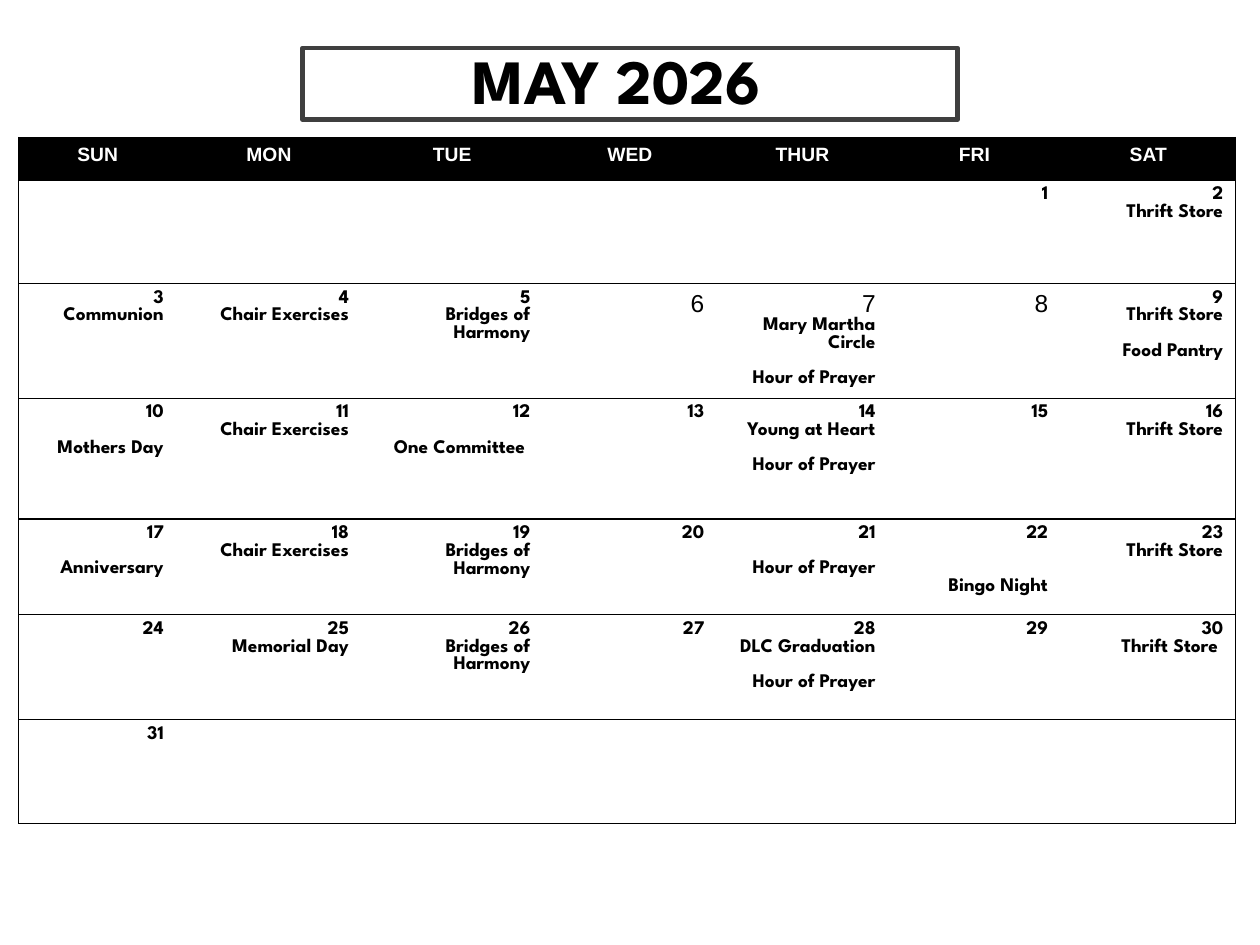
from dataclasses import dataclass

from pptx import Presentation
from pptx.dml.color import RGBColor
from pptx.enum.text import MSO_ANCHOR, MSO_AUTO_SIZE, PP_ALIGN
from pptx.oxml import parse_xml
from pptx.oxml.ns import nsdecls
from pptx.util import Inches, Pt


@dataclass(frozen=True)
class Theme:
    """Colours, fonts and type sizes of the calendar."""

    ink: str = "000000"
    paper: str = "FFFFFF"
    frame: str = "3F3F3F"
    display: str = "League Spartan"
    plain: str = "Arial"
    title_size: int = 36
    text_size: int = 11
    large_size: int = 14
    blank_line: int = 10
    rule: float = 0.75
    title_rule: float = 2.5


THEME = Theme()
PLAIN_TABLE = "{2D5ABB26-0587-4C30-8999-92F81FD0307C}"
WEEKDAYS = ["SUN", "MON", "TUE", "WED", "THUR", "FRI", "SAT"]
COLUMN_WIDTHS = [1.25, 1.47, 1.44, 1.38, 1.36, 1.37, 1.39]
ROW_HEIGHTS = [0.34, 0.82, 0.91, 0.96, 0.76, 0.83, 0.83]
RULED_ROWS = {0, 2, 4, 6}
FIRST_COLUMN = 5
DAYS_IN_MONTH = 31
PLAIN_DAYS = {6, 7, 8}

THRIFT = (0, "Thrift Store")
CHAIR = (0, "Chair Exercises")
BRIDGES = (0, "Bridges of Harmony")
PRAYER = (1, "Hour of Prayer")
EVENTS = {
    2: [THRIFT],
    3: [(0, "Communion")],
    4: [CHAIR],
    5: [BRIDGES],
    7: [(0, "Mary Martha Circle"), PRAYER],
    9: [THRIFT, (1, "Food Pantry")],
    10: [(1, "Mothers Day")],
    11: [CHAIR],
    12: [(1, "One Committee ")],
    14: [(0, "Young at Heart"), PRAYER],
    16: [THRIFT],
    17: [(1, "Anniversary")],
    18: [CHAIR],
    19: [BRIDGES],
    21: [PRAYER],
    22: [(2, "Bingo Night")],
    23: [THRIFT],
    25: [(0, "Memorial Day")],
    26: [BRIDGES],
    28: [(0, "DLC Graduation"), PRAYER],
    30: [(0, "Thrift Store ")],
}


def style_text(paragraph, align, font, size, color, bold=True):
    """Align a paragraph and format its runs."""
    paragraph.alignment = align
    for span in paragraph.runs:
        span.font.name = font
        span.font.size = Pt(size)
        span.font.bold = bold
        span.font.color.rgb = RGBColor.from_string(color)


def add_title(page, text):
    """Place the month in the framed title placeholder."""
    box = page.shapes.title
    box.left, box.top = Inches(2.4), Inches(0.38)
    box.width, box.height = Inches(5.2), Inches(0.57)
    box.fill.solid()
    box.fill.fore_color.rgb = RGBColor.from_string(THEME.paper)
    box.line.color.rgb = RGBColor.from_string(THEME.frame)
    box.line.width = Pt(THEME.title_rule)
    frame = box.text_frame
    frame.text = text
    frame.word_wrap = True
    frame.auto_size = MSO_AUTO_SIZE.NONE
    frame.vertical_anchor = MSO_ANCHOR.MIDDLE
    frame.margin_left = frame.margin_right = Inches(0.2)
    frame.margin_top = frame.margin_bottom = Inches(0.2)
    paragraph = frame.paragraphs[0]
    paragraph.line_spacing = 0.9
    paragraph.space_before = Pt(0)
    style_text(paragraph, PP_ALIGN.CENTER, THEME.display, THEME.title_size, THEME.ink)


def add_borders(cell, sides):
    """Draw the named sides of a cell, given in the order L, R, T, B."""
    properties = cell._tc.get_or_add_tcPr()
    for side in sides:
        properties.append(parse_xml(
            f'<a:ln{side} {nsdecls("a")} w="{Pt(THEME.rule)}"><a:solidFill>'
            f'<a:srgbClr val="{THEME.ink}"/></a:solidFill></a:ln{side}>'
        ))


def add_grid(page):
    """Add the empty calendar table with its outer frame and row rules."""
    rows, columns = len(ROW_HEIGHTS), len(COLUMN_WIDTHS)
    table = page.shapes.add_table(
        rows, columns, Inches(0.15), Inches(1.09),
        Inches(sum(COLUMN_WIDTHS)), Inches(sum(ROW_HEIGHTS)),
    ).table
    table._tbl.tblPr.find("{*}tableStyleId").text = PLAIN_TABLE
    table.horz_banding = False
    for column, width in zip(table.columns, COLUMN_WIDTHS):
        column.width = Inches(width)
    for row, height in zip(table.rows, ROW_HEIGHTS):
        row.height = Inches(height)
    for row in range(rows):
        for column in range(columns):
            cell = table.cell(row, column)
            sides = {
                "L": column == 0,
                "R": column == columns - 1,
                "T": row == 0 or row - 1 in RULED_ROWS,
                "B": row in RULED_ROWS,
            }
            add_borders(cell, [side for side, drawn in sides.items() if drawn])
            cell.fill.background()
    return table


def fill_header(table):
    """Write the weekday names on the dark first row."""
    for column, name in enumerate(WEEKDAYS):
        cell = table.cell(0, column)
        cell.fill.solid()
        cell.fill.fore_color.rgb = RGBColor.from_string(THEME.ink)
        cell.text_frame.text = name
        style_text(cell.text_frame.paragraphs[0], PP_ALIGN.CENTER,
                   THEME.plain, THEME.text_size, THEME.paper)


def fill_day(cell, day):
    """Write a day number and its events, spaced by their gaps."""
    frame = cell.text_frame
    frame.text = str(day)
    number = frame.paragraphs[0]
    if day in PLAIN_DAYS:
        style_text(number, PP_ALIGN.RIGHT, THEME.plain, THEME.large_size, THEME.ink, False)
    else:
        style_text(number, PP_ALIGN.RIGHT, THEME.display, THEME.text_size, THEME.ink)
    for gap, event in EVENTS.get(day, []):
        paragraph = frame.add_paragraph()
        paragraph.text = event
        paragraph.space_before = Pt(gap * THEME.blank_line)
        style_text(paragraph, PP_ALIGN.RIGHT, THEME.display, THEME.text_size, THEME.ink)


def main():
    """Build the calendar slide and save it."""
    deck = Presentation()
    deck.slide_width, deck.slide_height = Inches(10), Inches(7.5)
    page = deck.slides.add_slide(deck.slide_layouts[5])
    add_title(page, "MAY 2026\t")
    table = add_grid(page)
    fill_header(table)
    for day in range(1, DAYS_IN_MONTH + 1):
        week, column = divmod(day - 1 + FIRST_COLUMN, len(WEEKDAYS))
        fill_day(table.cell(week + 1, column), day)
    deck.save("out.pptx")


if __name__ == "__main__":
    main()
